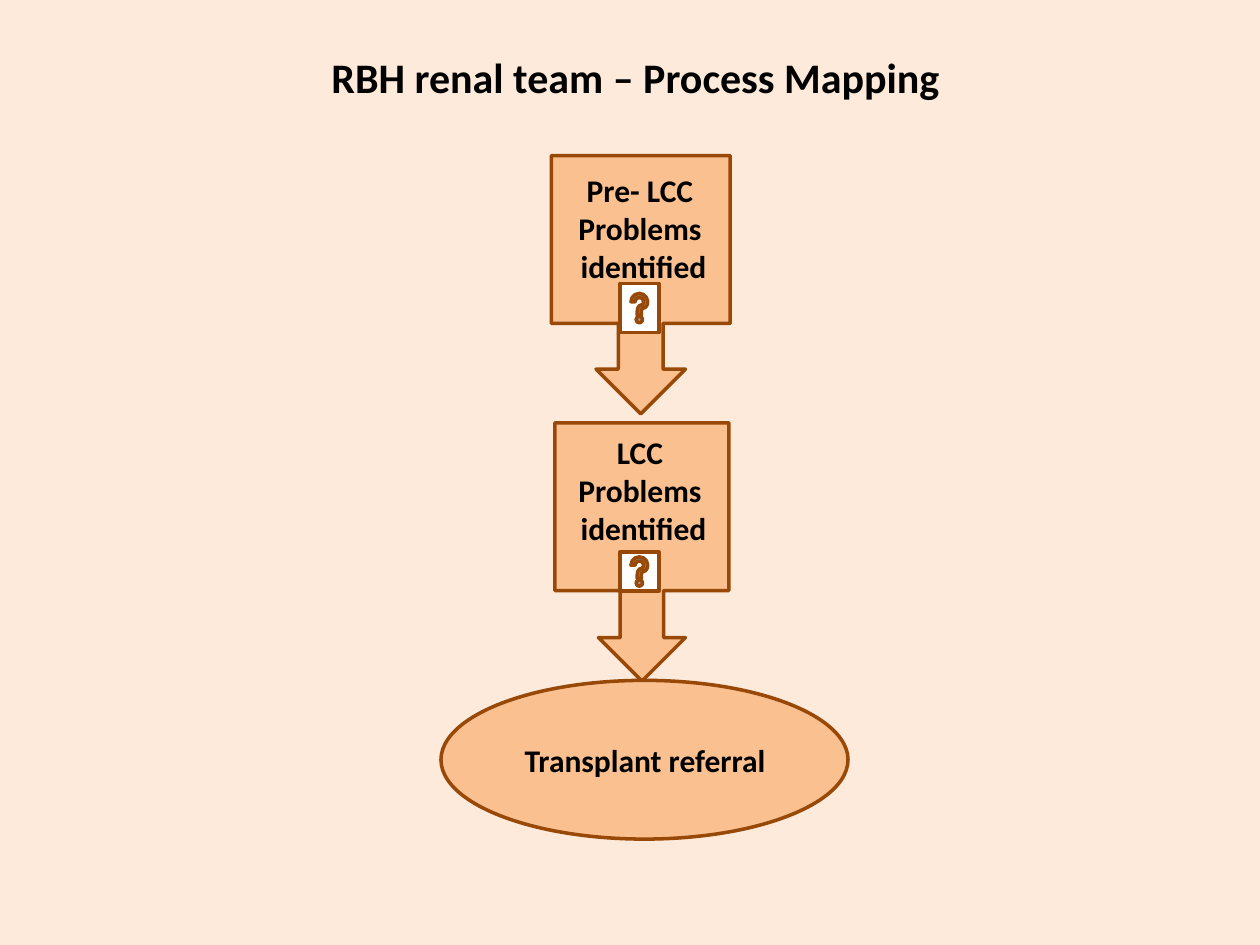
"""Build the renal team process mapping slide."""
import pptx
import pptx.dml.color
import pptx.enum.shapes
import pptx.enum.text
import pptx.util

Pt = pptx.util.Pt
RGBColor = pptx.dml.color.RGBColor
KIND = pptx.enum.shapes.MSO_SHAPE
PALE = RGBColor(0xFD, 0xEA, 0xDA)
PEACH = RGBColor(0xFA, 0xC0, 0x90)
BROWN = RGBColor(0x98, 0x48, 0x07)
WHITE = RGBColor(0xFF, 0xFF, 0xFF)
BLACK = RGBColor(0x00, 0x00, 0x00)


def add_form(slide, kind, box, fill=PEACH, turn=0):
    form = slide.shapes.add_shape(kind, *map(Pt, box))
    form.rotation = turn
    form.shadow.inherit = False
    form.fill.solid()
    form.fill.fore_color.rgb = fill
    form.line.color.rgb = BROWN
    form.line.width = Pt(2)


def add_text(slide, text, box, size=18, bold=True, color=BLACK, font="Calibri"):
    frame = slide.shapes.add_textbox(*map(Pt, box)).text_frame
    frame.word_wrap = True
    frame.auto_size = pptx.enum.text.MSO_AUTO_SIZE.SHAPE_TO_FIT_TEXT
    frame.text = text
    for para in frame.paragraphs:
        para.alignment = pptx.enum.text.PP_ALIGN.CENTER
        for run in para.runs:
            run.font.name = font
            run.font.size = Pt(size)
            run.font.bold = bold
            run.font.color.rgb = color


def add_step(slide, name, box, top):
    add_form(slide, KIND.RIGHT_ARROW_CALLOUT, box, turn=90)
    add_text(slide, f"{name}\nProblems\n identified", (275, top, 181.4, 72.7))


def add_help(slide, top, height):
    add_form(slide, KIND.ACTION_BUTTON_HELP, (354.2, top, 22.3, height), fill=WHITE)


def main():
    deck = pptx.Presentation()
    deck.slide_width, deck.slide_height = Pt(720), Pt(540)
    slide = deck.slides.add_slide(deck.slide_layouts[6])
    slide.background.fill.solid()
    slide.background.fill.fore_color.rgb = PALE

    add_step(slide, "Pre- LCC", (292.3, 111.6, 147.6, 102.2), 94.3)
    add_step(slide, "LCC", (293, 265.7, 147.6, 99.4), 244.1)
    add_form(slide, KIND.OVAL, (252, 388.8, 232.6, 90.7))
    add_text(slide, "Transplant referral", (277.9, 419.8, 181.4, 29))
    add_text(slide, "RBH renal team – Process Mapping", (156.2, 25.9, 414, 36), size=24)
    add_help(slide, 162, 28.1)
    add_help(slide, 315.4, 22.3)
    deck.save("out.pptx")


if __name__ == "__main__":
    main()
